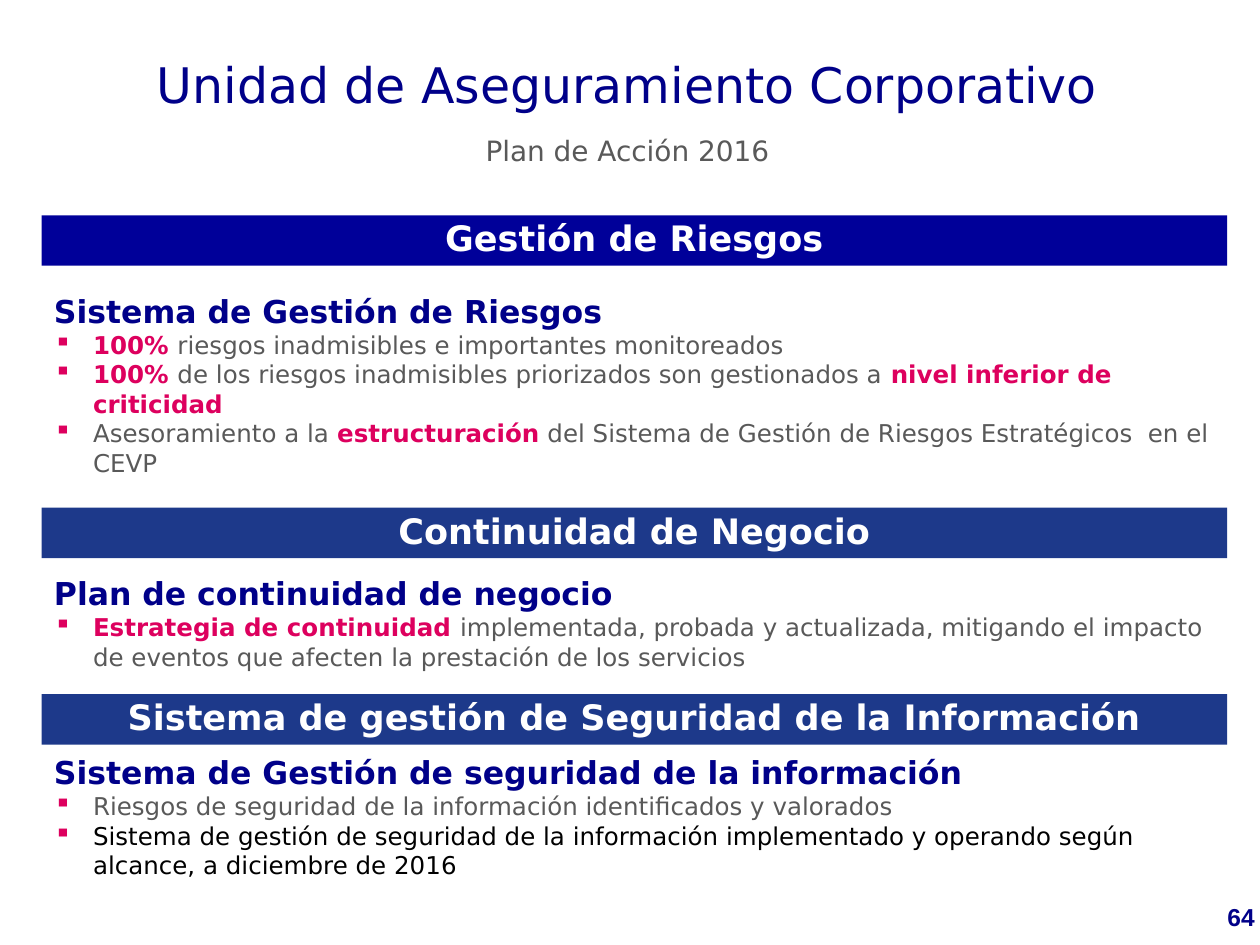
from lxml.etree import SubElement
from pptx import Presentation
from pptx.dml.color import RGBColor
from pptx.enum.shapes import MSO_SHAPE
from pptx.enum.text import MSO_ANCHOR, PP_ALIGN
from pptx.oxml.ns import qn
from pptx.util import Inches, Pt

COLORS = {
    "navy": "000089",
    "bar_dark": "000099",
    "bar_blue": "1D398A",
    "pink": "DD005E",
    "gray": "595959",
    "black": "000000",
    "white": "FFFFFF",
}
FONT = "DejaVu Sans"
LEFT, WIDTH, BAR_HEIGHT = 0.33, 9.41, 0.4
INDENT = Inches(0.31)

TITLE = {"size": 28, "color": "navy"}
SUBTITLE = {"size": 16, "color": "gray"}
PAGE_NUMBER = {"size": 14, "color": "navy", "bold": True, "name": "Arial"}
BAR_TEXT = {"size": 20, "color": "white", "bold": True}
HEADING = {"size": 18, "color": "navy", "bold": True}
BODY = {"size": 14, "color": "gray"}
BODY_BLACK = {"size": 14, "color": "black"}
KEY = {"size": 14, "color": "pink", "bold": True}

# Each section: bar top, bar colour, bar text, body top, body height, heading, bullets
SECTIONS = [
    (1.71, "bar_dark", "Gestión de Riesgos", 2.27, 1.58, "Sistema de Gestión de Riesgos", [
        [("100% ", KEY), ("riesgos inadmisibles e importantes monitoreados", BODY)],
        [("100% ", KEY),
         ("de los riesgos inadmisibles priorizados son gestionados a ", BODY),
         ("nivel inferior de criticidad", KEY)],
        [("Asesoramiento a la ", BODY), ("estructuración", KEY),
         (" del Sistema de Gestión de Riesgos Estratégicos  en el CEVP", BODY)],
    ]),
    (4.03, "bar_blue", "Continuidad de Negocio", 4.51, 0.88, "Plan de continuidad de negocio", [
        [("Estrategia de continuidad ", KEY),
         ("implementada, probada y actualizada, mitigando el impacto de eventos "
          "que afecten la prestación de los servicios", BODY)],
    ]),
    (5.51, "bar_blue", "Sistema de gestión de Seguridad de la Información", 5.93, 1.11,
     "Sistema de Gestión de seguridad de la información", [
        [("Riesgos de seguridad de la información identificados y valorados", BODY)],
        [("Sistema de gestión de seguridad de la información implementado y operando "
          "según alcance, a diciembre de 2016", BODY_BLACK)],
    ]),
]


def rgb(name):
    return RGBColor.from_string(COLORS[name])


def add_run(paragraph, text, style):
    run = paragraph.add_run()
    run.text = text
    values = {"name": FONT, "bold": False, **style}
    values["size"] = Pt(values["size"])
    run.font.color.rgb = rgb(values.pop("color"))
    for name, value in values.items():
        setattr(run.font, name, value)


def add_bullet(paragraph):
    properties = paragraph._p.get_or_add_pPr()
    properties.set("marL", str(INDENT))
    properties.set("indent", str(-INDENT))
    color = SubElement(properties, qn("a:buClr"))
    SubElement(color, qn("a:srgbClr"), val=COLORS["pink"])
    SubElement(properties, qn("a:buChar"), char="▪")


def add_text_box(slide, box, anchor=MSO_ANCHOR.TOP):
    frame = slide.shapes.add_textbox(*map(Inches, box)).text_frame
    frame.word_wrap = True
    frame.vertical_anchor = anchor
    return frame


def write_centered(frame, text, style, line_spacing=1.0):
    paragraph = frame.paragraphs[0]
    paragraph.alignment = PP_ALIGN.CENTER
    paragraph.line_spacing = line_spacing
    add_run(paragraph, text, style)


def add_header(slide, left, top):
    title = add_text_box(slide, (left, top, 8.63, 0.53))
    write_centered(title, "Unidad de Aseguramiento Corporativo", TITLE, 0.9)
    subtitle = add_text_box(slide, (left + 0.58, top + 0.56, 7.48, 0.39), MSO_ANCHOR.MIDDLE)
    write_centered(subtitle, "Plan de Acción 2016", SUBTITLE)


def add_bar(slide, box, color, text):
    bar = slide.shapes.add_shape(MSO_SHAPE.RECTANGLE, *map(Inches, box))
    bar.shadow.inherit = False
    bar.fill.solid()
    bar.fill.fore_color.rgb = rgb(color)
    bar.line.fill.background()
    bar.text_frame.word_wrap = True
    bar.text_frame.vertical_anchor = MSO_ANCHOR.TOP
    write_centered(bar.text_frame, text, BAR_TEXT, 0.9)


def add_body(slide, box, heading, bullets):
    frame = add_text_box(slide, box)
    add_run(frame.paragraphs[0], heading, HEADING)
    for runs in bullets:
        paragraph = frame.add_paragraph()
        add_bullet(paragraph)
        for text, style in runs:
            add_run(paragraph, text, style)


def add_page_number(slide, box):
    write_centered(add_text_box(slide, box), "64", PAGE_NUMBER)


def main():
    presentation = Presentation()
    presentation.slide_width = Inches(10)
    presentation.slide_height = Inches(7.5)
    slide = presentation.slides.add_slide(presentation.slide_layouts[6])
    add_page_number(slide, (9.54, 7.11, 0.62, 0.34))
    add_header(slide, 0.66, 0.44)
    for bar_top, color, bar_text, body_top, body_height, heading, bullets in SECTIONS:
        add_bar(slide, (LEFT, bar_top, WIDTH, BAR_HEIGHT), color, bar_text)
        add_body(slide, (LEFT, body_top, WIDTH, body_height), heading, bullets)
    presentation.save("out.pptx")


if __name__ == "__main__":
    main()
